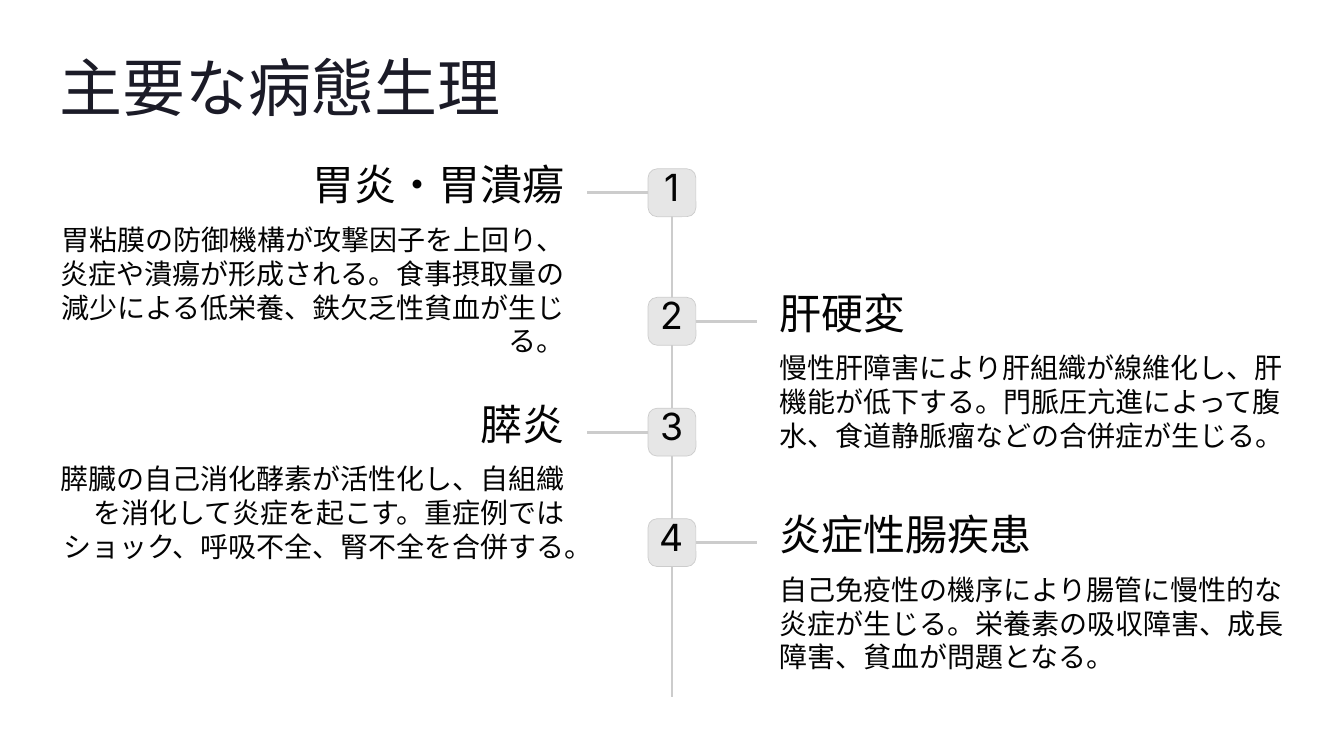
from dataclasses import dataclass

from lxml.etree import SubElement
from pptx import Presentation
from pptx.dml.color import RGBColor
from pptx.enum.shapes import MSO_CONNECTOR, MSO_SHAPE
from pptx.enum.text import MSO_ANCHOR, MSO_AUTO_SIZE, PP_ALIGN
from pptx.oxml.ns import qn
from pptx.shapes.autoshape import Shape
from pptx.shapes.connector import Connector
from pptx.slide import Slide
from pptx.util import Inches, Length, Pt

TOP, LEFT, BOTTOM, RIGHT = range(4)


@dataclass(frozen=True)
class TextStyle:
    font: str
    size: float
    line_spacing: float
    color: RGBColor


@dataclass(frozen=True)
class Theme:
    background = RGBColor(0xFF, 0xFF, 0xFF)
    line = RGBColor(0xCC, 0xCC, 0xCC)
    badge = RGBColor(0xE6, 0xE6, 0xE6)
    ink = RGBColor(0x03, 0x03, 0x03)
    title = TextStyle("Inter", 54, 57, RGBColor(0x1B, 0x1B, 0x27))
    number = TextStyle("Inter", 32, 27.5, ink)
    heading = TextStyle("Inter", 36, 28.5, ink)
    body = TextStyle("Cabin", 24, 29, ink)


@dataclass(frozen=True)
class Condition:
    row: float
    heading: str
    description: str


THEME = Theme()
COLUMNS, ROWS = 160, 90
MARGIN = 7.1
BADGE_SIZE = 5.7
BADGE_LEFT = (COLUMNS - BADGE_SIZE) / 2
BRANCH_LENGTH = 7.3
TEXT_WIDTH = 60.15
HEADING_WIDTH = 31.9
SPINE_END = 83

CONDITIONS = [
    Condition(20.1, "胃炎・胃潰瘍", "胃粘膜の防御機構が攻撃因子を上回り、炎症や潰瘍が形成される。"
              "食事摂取量の減少による低栄養、鉄欠乏性貧血が生じる。"),
    Condition(35.4, "肝硬変", "慢性肝障害により肝組織が線維化し、肝機能が低下する。"
              "門脈圧亢進によって腹水、食道静脈瘤などの合併症が生じる。"),
    Condition(48.6, "膵炎", "膵臓の自己消化酵素が活性化し、自組織を消化して炎症を起こす。"
              "重症例ではショック、呼吸不全、腎不全を合併する。"),
    Condition(61.75, "炎症性腸疾患", "自己免疫性の機序により腸管に慢性的な炎症が生じる。"
              "栄養素の吸収障害、成長障害、貧血が問題となる。"),
]


def cells(count: float) -> Length:
    """Length of a number of square grid cells."""
    return Inches(count * 16 / COLUMNS)


def write(shape: Shape, text: str, style: TextStyle, alignment: PP_ALIGN,
          anchor: MSO_ANCHOR = MSO_ANCHOR.TOP) -> None:
    frame = shape.text_frame
    frame.text = text
    frame.word_wrap = True
    frame.auto_size = MSO_AUTO_SIZE.NONE
    frame.vertical_anchor = anchor
    frame.margin_left = frame.margin_right = frame.margin_top = frame.margin_bottom = 0
    paragraph = frame.paragraphs[0]
    paragraph.alignment = alignment
    paragraph.line_spacing = Pt(style.line_spacing)
    paragraph.space_before = Pt(0)
    font = paragraph.runs[0].font
    font.name = style.font
    font.size = Pt(style.size)
    font.color.rgb = style.color


def add_title(slide: Slide, text: str) -> None:
    title = slide.shapes.title
    title.left, title.top = cells(MARGIN), cells(6.8)
    title.width, title.height = cells(63.7), cells(8)
    write(title, text, THEME.title, PP_ALIGN.LEFT)


def add_text(slide: Slide, left: float, top: float, width: float, height: float,
             text: str, style: TextStyle, alignment: PP_ALIGN) -> None:
    box = slide.shapes.add_textbox(cells(left), cells(top), cells(width), cells(height))
    write(box, text, style, alignment)


def add_badge(slide: Slide, row: float, number: int) -> Shape:
    badge = slide.shapes.add_shape(MSO_SHAPE.ROUNDED_RECTANGLE, cells(BADGE_LEFT), cells(row),
                                   cells(BADGE_SIZE), cells(BADGE_SIZE))
    badge.adjustments[0] = 0.19
    badge.shadow.inherit = False
    badge.fill.solid()
    badge.fill.fore_color.rgb = THEME.badge
    badge.line.color.rgb = THEME.line
    badge.line.width = Pt(0.6)
    write(badge, str(number), THEME.number, PP_ALIGN.CENTER, MSO_ANCHOR.MIDDLE)
    return badge


def add_line(slide: Slide, start_column: float, start_row: float,
             end_column: float, end_row: float) -> Connector:
    line = slide.shapes.add_connector(MSO_CONNECTOR.STRAIGHT, cells(start_column),
                                      cells(start_row), cells(end_column), cells(end_row))
    line.line.color.rgb = THEME.line
    line.line.width = Pt(2.4)
    SubElement(line._element.spPr, qn("a:effectLst"))
    return line


def add_condition(slide: Slide, condition: Condition, number: int) -> Shape:
    """Draw badge, branch and texts, odd numbers to the left."""
    row = condition.row
    badge = add_badge(slide, row, number)
    middle = row + BADGE_SIZE / 2
    if number % 2:
        alignment, side = PP_ALIGN.RIGHT, LEFT
        branch_start, branch_end = BADGE_LEFT, BADGE_LEFT - BRANCH_LENGTH
        text_left = MARGIN
        heading_left = text_left + TEXT_WIDTH - HEADING_WIDTH
    else:
        alignment, side = PP_ALIGN.LEFT, RIGHT
        branch_start = BADGE_LEFT + BADGE_SIZE
        branch_end = branch_start + BRANCH_LENGTH
        text_left = heading_left = COLUMNS - MARGIN - TEXT_WIDTH
    add_line(slide, branch_start, middle, branch_end, middle).begin_connect(badge, side)
    add_text(slide, heading_left, row + 0.85, HEADING_WIDTH, 4,
             condition.heading, THEME.heading, alignment)
    add_text(slide, text_left, row + 6.35, TEXT_WIDTH, 12.2,
             condition.description, THEME.body, alignment)
    return badge


def main() -> None:
    presentation = Presentation()
    presentation.slide_width, presentation.slide_height = cells(COLUMNS), cells(ROWS)
    slide = presentation.slides.add_slide(presentation.slide_layouts.get_by_name("Title Only"))
    slide.background.fill.solid()
    slide.background.fill.fore_color.rgb = THEME.background
    add_title(slide, "主要な病態生理")
    spine = add_line(slide, COLUMNS / 2, CONDITIONS[0].row, COLUMNS / 2, SPINE_END)
    badges = [add_condition(slide, condition, number)
              for number, condition in enumerate(CONDITIONS, start=1)]
    spine.begin_connect(badges[0], TOP)
    presentation.save("out.pptx")


if __name__ == "__main__":
    main()
